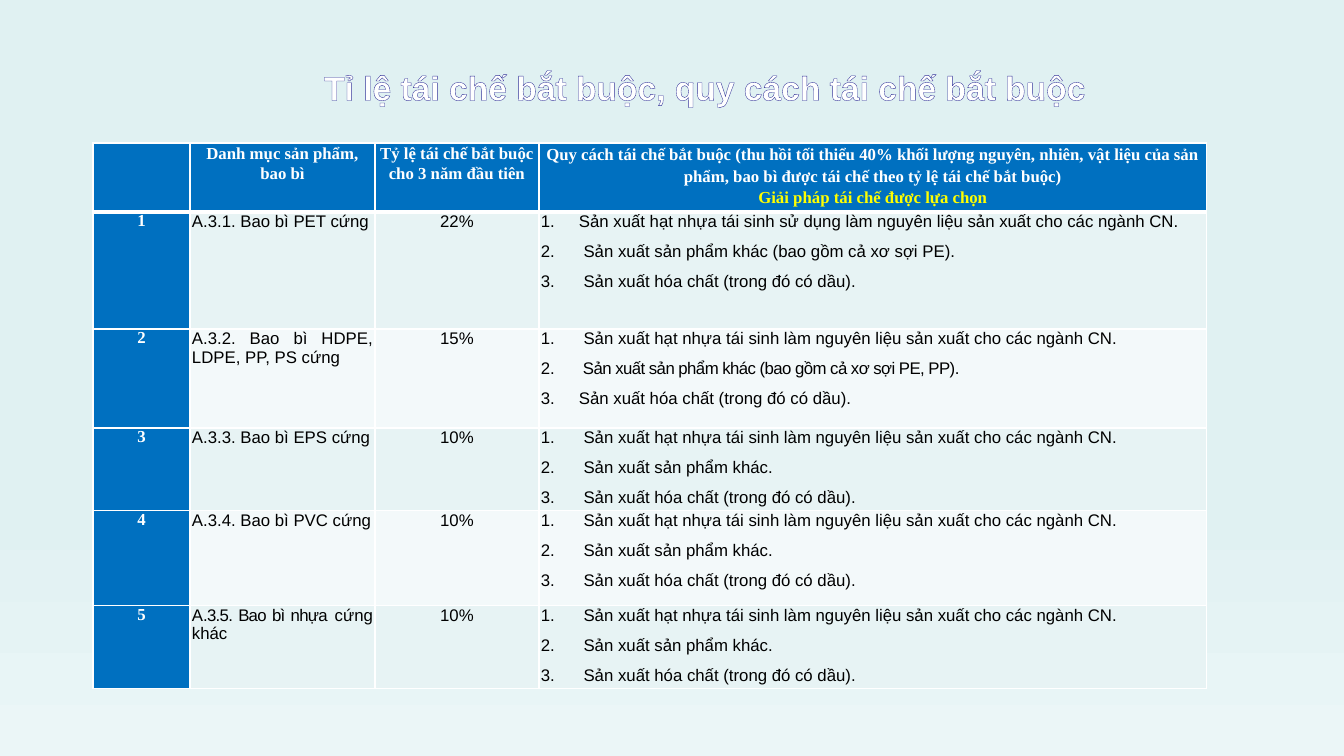
import pptx
import pptx.dml.color
import pptx.enum.text
import pptx.oxml.ns
import pptx.util
from lxml import etree

PX = 914400 / 100.8
ALIGN = pptx.enum.text.PP_ALIGN
BLUE, WHITE, BLACK, YELLOW = "0070C0", "FFFFFF", "000000", "FFFF00"
BANDS = ["E7F3F4", "F3F9FA"]
COLUMN_WIDTHS = [97, 185, 164, 668]
ROW_HEIGHTS = [69, 117, 99, 83, 95, 83]
LIST_INDENT = 38

TITLE = "Tỉ lệ tái chế bắt buộc, quy cách tái chế bắt buộc"
HEADERS = [
    [],
    ["Danh mục sản phẩm, bao bì"],
    ["Tỷ lệ tái chế bắt buộc cho 3 năm đầu tiên"],
    ["Quy cách tái chế bắt buộc (thu hồi tối thiểu 40% khối lượng nguyên, nhiên, vật liệu "
     "của sản phẩm, bao bì được tái chế theo tỷ lệ tái chế bắt buộc)",
     "Giải pháp tái chế được lựa chọn"],
]
PELLETS = " Sản xuất hạt nhựa tái sinh làm nguyên liệu sản xuất cho các ngành CN."
OTHER = " Sản xuất sản phẩm khác."
CHEMICALS = " Sản xuất hóa chất (trong đó có dầu)."
OTHER_PE_PP = " Sản xuất sản phẩm khác (bao gồm cả xơ sợi PE, PP)."
USUAL = [PELLETS, OTHER, CHEMICALS]
# "|" separates runs that differ in letter spacing
PACKAGING = [
    ("A.3.1. Bao bì PET cứng", "22%",
     ["Sản xuất hạt nhựa tái sinh sử dụng làm nguyên liệu sản xuất cho các ngành CN.",
      " Sản xuất sản phẩm khác (bao gồm cả xơ sợi PE).", CHEMICALS]),
    ("A.3.2. Bao bì HDPE, LDPE, PP, PS cứng", "15%",
     [PELLETS, OTHER_PE_PP, CHEMICALS.strip()]),
    ("A.3.3. Bao bì EPS cứng", "10%", USUAL),
    ("A.3.4. Bao bì PVC cứng", "10%", USUAL),
    ("A|.3.5. Bao bì nhựa| cứng khác", "10%", USUAL),
]
LETTER_SPACING = {OTHER_PE_PP: -40, ".3.5. Bao bì nhựa": -50}


def px(length):
    return pptx.util.Emu(round(length * PX))


def rgb(value):
    return pptx.dml.color.RGBColor.from_string(value)


def line_element(tag, color, points):
    """Return an a:ln-type element with a solid colour."""
    line = etree.Element(pptx.oxml.ns.qn(tag), w=str(round(points * 12700)))
    fill = etree.SubElement(line, pptx.oxml.ns.qn("a:solidFill"))
    etree.SubElement(fill, pptx.oxml.ns.qn("a:srgbClr"), val=color)
    return line


def style_font(font, name, size, color, bold):
    font.name, font.size, font.bold = name, pptx.util.Pt(size), bold
    font.color.rgb = rgb(color)


def style_cell(cell, fill, top, bottom):
    """Set insets, fill and white borders; top and bottom are widths in points."""
    cell.margin_left = cell.margin_right = px(2)
    cell.margin_top = cell.margin_bottom = 0
    cell.fill.solid()
    cell.fill.fore_color.rgb = rgb(fill)
    borders = [("a:lnL", 1), ("a:lnR", 1), ("a:lnT", top), ("a:lnB", bottom)]
    for position, (tag, points) in enumerate(borders):
        cell._tc.tcPr.insert(position, line_element(tag, WHITE, points))


def write_cell(cell, lines, align, font_name, color, bold):
    cell.text_frame.text = "\n".join(lines)
    for para, line in zip(cell.text_frame.paragraphs, lines):
        para.alignment = align
        pieces = line.split("|")
        para.runs[0].text = pieces[0]
        for piece in pieces[1:]:
            para.add_run().text = piece
        for span in para.runs:
            style_font(span.font, font_name, 12, color, bold)
            if span.text in LETTER_SPACING:
                span.font._element.set("spc", str(LETTER_SPACING[span.text]))


def space_body(cell):
    for index, para in enumerate(cell.text_frame.paragraphs):
        para.space_before = pptx.util.Pt(4 if index else 0)
        para.space_after = pptx.util.Pt(4)


def number_list(cell):
    for para in cell.text_frame.paragraphs:
        properties = para._p.get_or_add_pPr()
        properties.set("marL", str(px(LIST_INDENT)))
        properties.set("indent", str(-px(LIST_INDENT)))
        etree.SubElement(properties, pptx.oxml.ns.qn("a:buFont"), typeface="+mj-lt")
        etree.SubElement(properties, pptx.oxml.ns.qn("a:buAutoNum"), type="arabicPeriod")


def paint_background(page):
    fill = page.background.fill
    fill.gradient()
    fill.gradient_angle = 270
    for stop, position, color in zip(fill.gradient_stops, (0.66, 1), ("E0F1F2", "EBF6F7")):
        stop.position = position
        stop.color.rgb = rgb(color)


def place_title(page, left, top, width, height):
    box = page.shapes.title
    box.left, box.top, box.width, box.height = map(px, (left, top, width, height))
    frame = box.text_frame
    frame.text = TITLE
    frame.word_wrap = False
    frame.auto_size = pptx.enum.text.MSO_AUTO_SIZE.NONE
    frame.vertical_anchor = pptx.enum.text.MSO_ANCHOR.MIDDLE
    para = frame.paragraphs[0]
    para.alignment = ALIGN.CENTER
    span = para.runs[0]
    style_font(span.font, "Arial", 24, WHITE, True)
    span.font._element.insert(0, line_element("a:ln", "333399", 0.52))


def fill_header(cells):
    for cell, lines, spacing in zip(cells, HEADERS, (1, 1.07, 1.07, 1.15)):
        style_cell(cell, BLUE, 1, 3)
        write_cell(cell, lines, ALIGN.CENTER, "Times New Roman", WHITE, True)
        for para in cell.text_frame.paragraphs:
            para.line_spacing = spacing
    cells[-1].text_frame.paragraphs[-1].runs[0].font.color.rgb = rgb(YELLOW)


def fill_body_row(cells, number, name, rate, solutions):
    contents = [[str(number)], [name], [rate], solutions]
    aligns = [ALIGN.CENTER, ALIGN.JUSTIFY, ALIGN.CENTER, ALIGN.JUSTIFY]
    for column, (cell, lines, align) in enumerate(zip(cells, contents, aligns)):
        fill = BANDS[(number - 1) % 2] if column else BLUE
        font = ("Arial", BLACK, False) if column else ("Times New Roman", WHITE, True)
        style_cell(cell, fill, 3 if number == 1 else 1, 1)
        write_cell(cell, lines, align, *font)
        space_body(cell)
    number_list(cells[-1])


def place_table(page, left, top):
    size = (sum(COLUMN_WIDTHS), sum(ROW_HEIGHTS))
    table = page.shapes.add_table(len(ROW_HEIGHTS), len(COLUMN_WIDTHS),
                                  *map(px, (left, top, *size))).table
    table.first_col = True
    for column, width in zip(table.columns, COLUMN_WIDTHS):
        column.width = px(width)
    for row, height in zip(table.rows, ROW_HEIGHTS):
        row.height = px(height)
    rows = [list(row.cells) for row in table.rows]
    fill_header(rows[0])
    for number, packaging in enumerate(PACKAGING, 1):
        fill_body_row(rows[number], number, *packaging)


def main():
    deck = pptx.Presentation()
    deck.slide_width, deck.slide_height = px(1344), px(756)
    page = deck.slides.add_slide(deck.slide_layouts[5])
    paint_background(page)
    place_title(page, 311, 62, 788, 50)
    place_table(page, 93, 143)
    deck.save("out.pptx")


if __name__ == "__main__":
    main()
